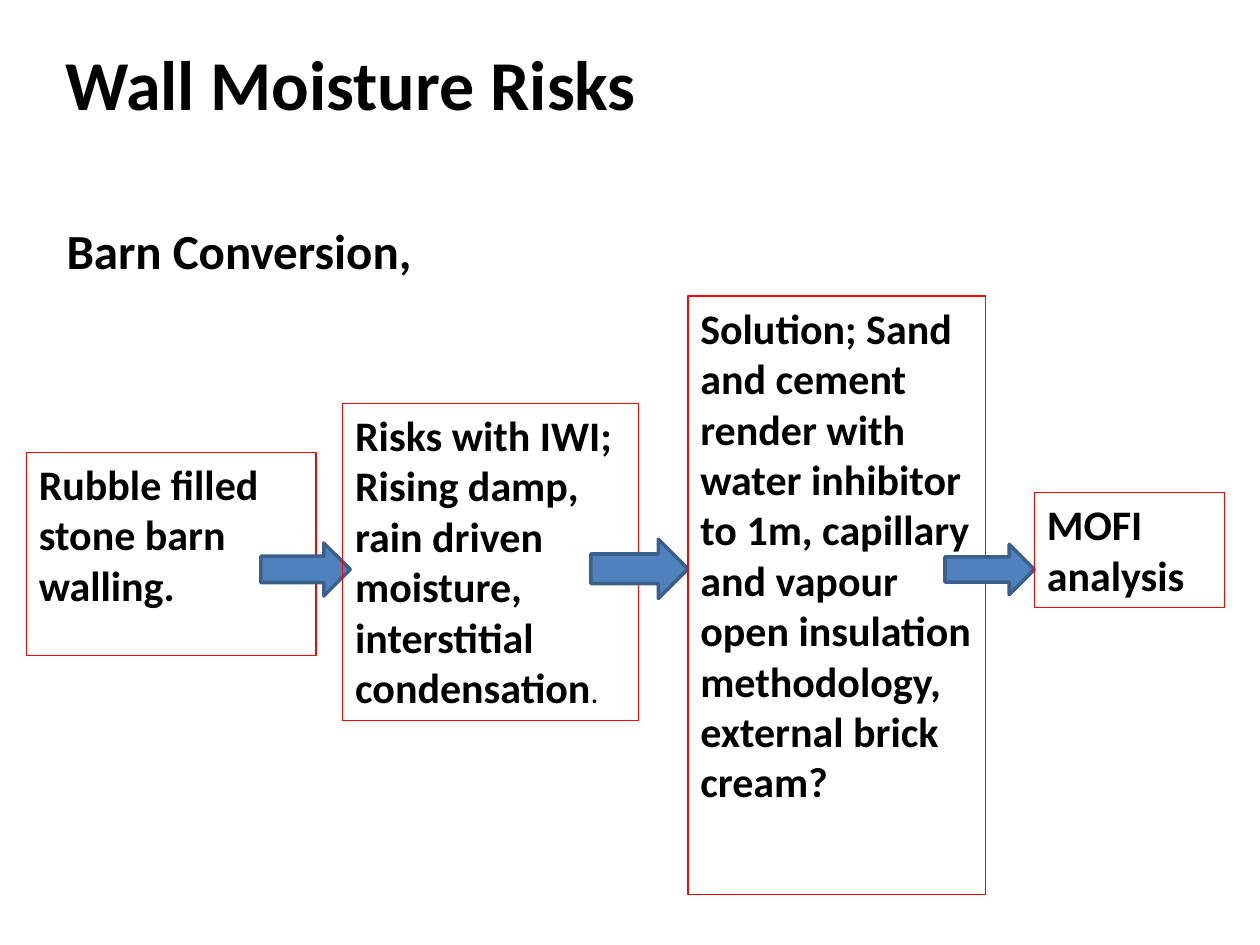
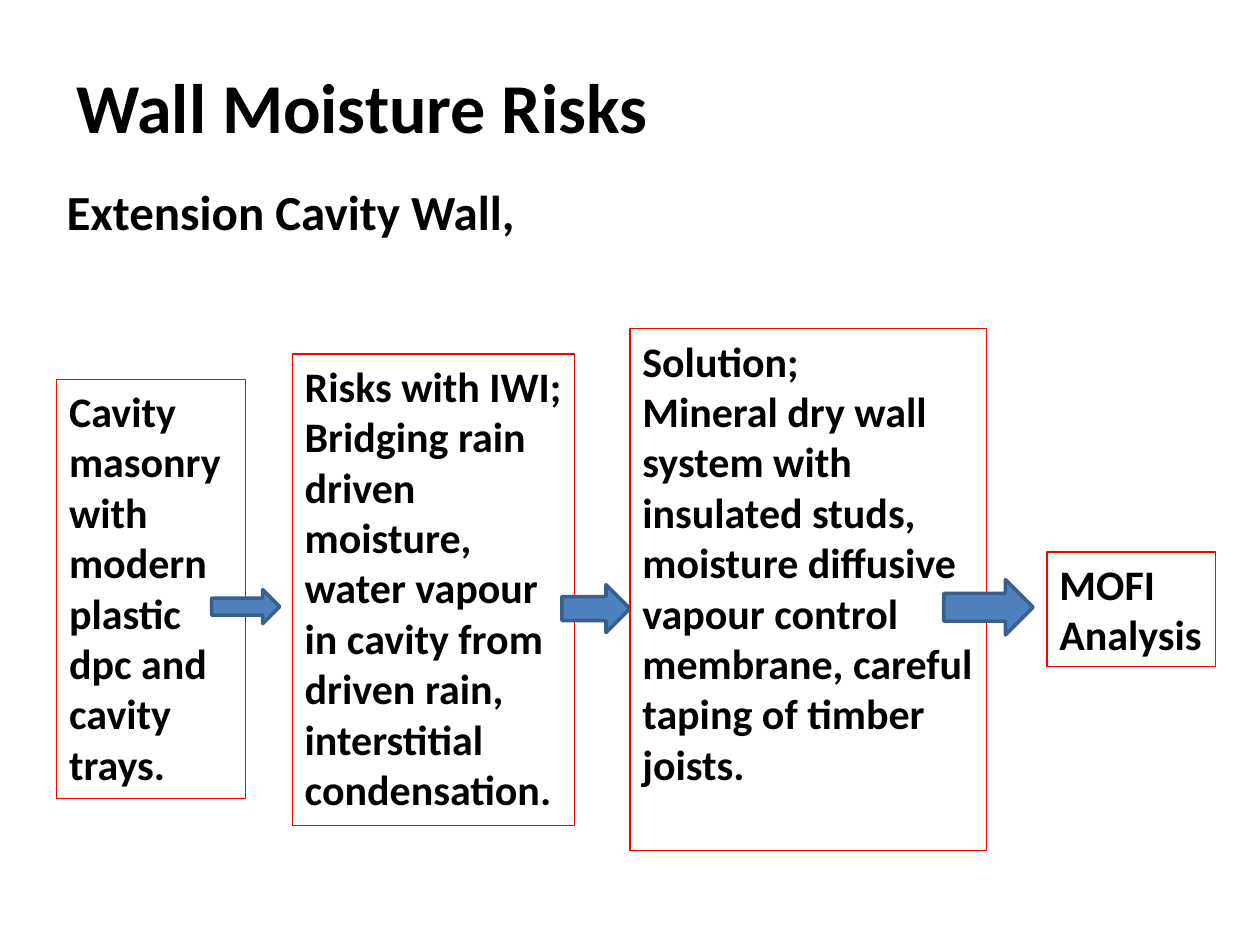
from dataclasses import dataclass

from pptx import Presentation
from pptx.dml.color import RGBColor
from pptx.enum.shapes import MSO_SHAPE
from pptx.enum.text import MSO_ANCHOR, PP_ALIGN
from pptx.util import Inches, Pt


@dataclass(frozen=True)
class Theme:
    font: str = "Calibri"
    text: str = "000000"
    box_line: str = "FF0000"
    arrow_fill: str = "4F81BD"
    arrow_line: str = "3A5F8C"
    title_size: int = 40
    subtitle_size: int = 28
    body_size: int = 24
    small_size: int = 18
    box_weight: float = 0.75
    arrow_weight: float = 2


THEME = Theme()
TITLE = "Wall Moisture Risks"


def add_run(p, text, size, bold=True):
    r = p.add_run()
    r.text = text
    r.font.name = THEME.font
    r.font.size = Pt(size)
    r.font.bold = bold
    r.font.color.rgb = RGBColor.from_string(THEME.text)
    return r


def add_text(s, text, box, size=THEME.body_size, anchor=MSO_ANCHOR.TOP,
             wrap=True, line=None, tail=None):
    """Write one paragraph per line of text; tail is a small plain ending."""
    sp = s.shapes.add_textbox(*map(Inches, box))
    if line:
        sp.line.color.rgb = RGBColor.from_string(line)
        sp.line.width = Pt(THEME.box_weight)
    tf = sp.text_frame
    tf.word_wrap = wrap
    tf.vertical_anchor = anchor
    for i, words in enumerate(text.split("\n")):
        p = tf.add_paragraph() if i else tf.paragraphs[0]
        p.alignment = PP_ALIGN.LEFT
        add_run(p, words, size)
    if tail:
        add_run(p, tail, THEME.small_size, bold=False)
    return sp


def add_arrow(s, box):
    sp = s.shapes.add_shape(MSO_SHAPE.RIGHT_ARROW, *map(Inches, box))
    sp.shadow.inherit = False
    sp.fill.solid()
    sp.fill.fore_color.rgb = RGBColor.from_string(THEME.arrow_fill)
    sp.line.color.rgb = RGBColor.from_string(THEME.arrow_line)
    sp.line.width = Pt(THEME.arrow_weight)


def add_flow(s, steps, arrows):
    """Draw the steps in order, each arrow beneath the step it points to."""
    for i, (text, box, options) in enumerate(steps):
        if i:
            add_arrow(s, arrows[i - 1])
        add_text(s, text, box, line=THEME.box_line, **options)


def add_risk_slide(prs, title_box, subtitle, subtitle_box, steps, arrows):
    s = prs.slides.add_slide(prs.slide_layouts[6])
    add_text(s, TITLE, title_box, size=THEME.title_size,
             anchor=MSO_ANCHOR.MIDDLE)
    add_text(s, subtitle, subtitle_box, size=THEME.subtitle_size)
    add_flow(s, steps, arrows)


BARN = dict(
    title_box=(0.42, 0.03, 9, 1.25),
    subtitle="Barn Conversion,",
    subtitle_box=(0.43, 1.7, 3.46, 0.57),
    steps=[
        ("Rubble filled stone barn walling.", (0.21, 3.59, 2.3, 1.61), {}),
        ("Risks with IWI;\nRising damp, rain driven moisture, "
         "interstitial condensation",
         (2.72, 3.2, 2.35, 2.52), dict(tail=".")),
        ("Solution; Sand and cement render with water inhibitor to 1m, "
         "capillary and vapour open insulation methodology, "
         "external brick cream?", (5.46, 2.35, 2.36, 4.75), {}),
        ("MOFI analysis", (8.21, 3.91, 1.51, 0.91), {}),
    ],
    arrows=[(2.07, 4.31, 0.71, 0.42), (4.69, 4.28, 0.77, 0.47),
            (7.5, 4.32, 0.71, 0.4)],
)

EXTENSION = dict(
    title_box=(0.51, 0.21, 9, 1.25),
    subtitle="Extension Cavity Wall,",
    subtitle_box=(0.43, 1.39, 3.79, 0.58),
    steps=[
        ("Cavity masonry with modern plastic dpc and cavity trays.",
         (0.45, 3.01, 1.5, 3.33), {}),
        ("Risks with IWI;\nBridging rain driven moisture, water vapour in "
         "cavity from driven rain, interstitial condensation.",
         (2.32, 2.81, 2.24, 3.74), {}),
        ("Solution;\nMineral dry wall system with insulated studs, moisture "
         "diffusive vapour control membrane, careful taping of timber "
         "joists.", (5, 2.61, 2.83, 4.14), {}),
        ("MOFI\nAnalysis", (8.31, 4.38, 1.34, 0.91), dict(wrap=False)),
    ],
    arrows=[(1.68, 4.68, 0.54, 0.27), (4.46, 4.64, 0.54, 0.38),
            (7.49, 4.6, 0.71, 0.44)],
)


def main():
    prs = Presentation()
    prs.slide_width, prs.slide_height = Inches(10), Inches(7.5)
    for content in (BARN, EXTENSION):
        add_risk_slide(prs, **content)
    prs.save("out.pptx")


if __name__ == "__main__":
    main()
